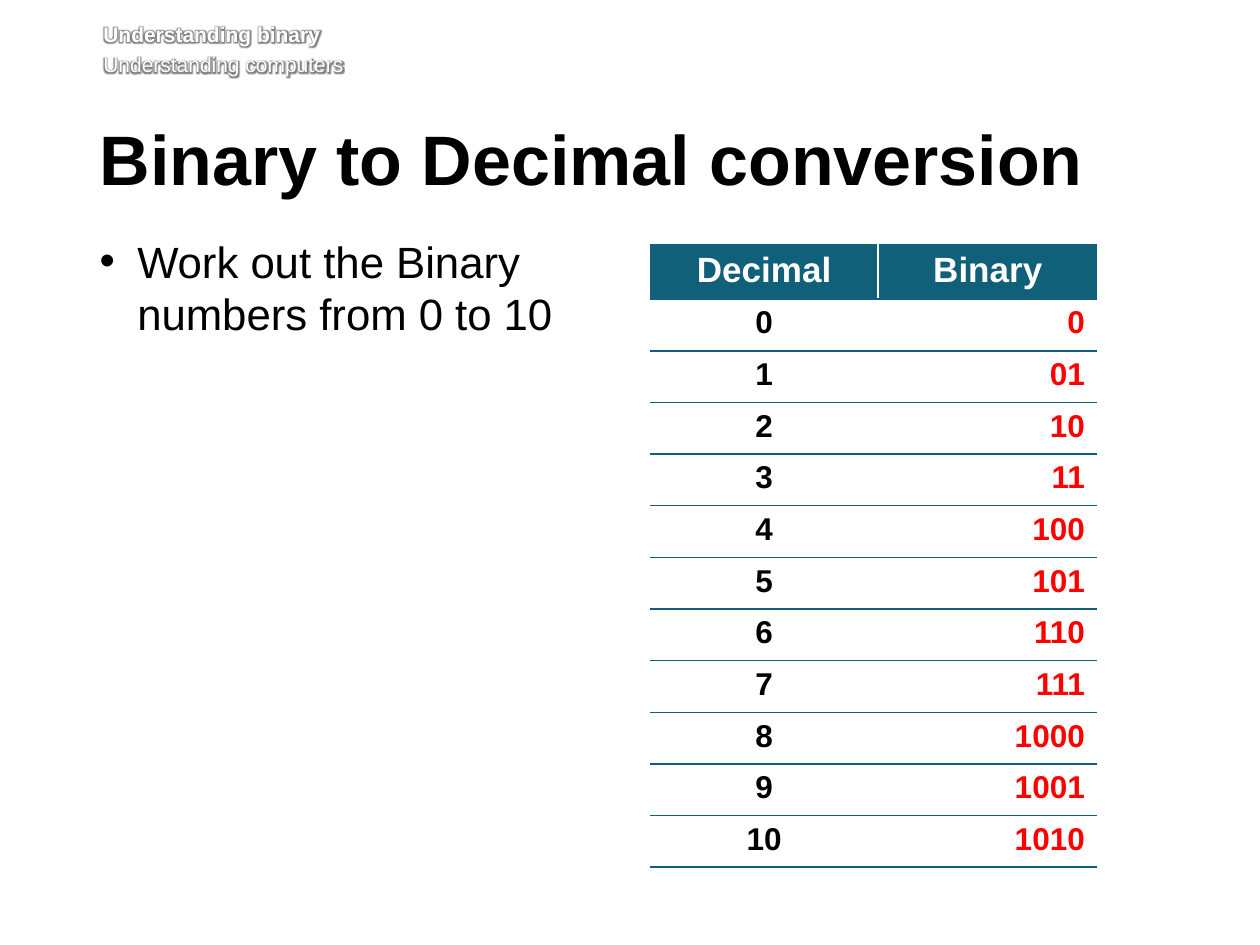
from lxml.etree import SubElement as Sub
from pptx import Presentation
from pptx.dml.color import RGBColor
from pptx.enum.text import PP_ALIGN as Align
from pptx.oxml.ns import qn
from pptx.util import Inches, Pt

FONT = "Arial"
WHITE = RGBColor(0xFF, 0xFF, 0xFF)
BLACK = RGBColor(0, 0, 0)
RED = RGBColor(0xFF, 0, 0)
TEAL = RGBColor(0x0F, 0x60, 0x78)

BINARY = ["0", "01", "10", "11", "100", "101", "110", "111",
          "1000", "1001", "1010"]
COLS = [1.81, 1.74]
ROW = 0.41


def write(par, text, size=18, color=BLACK, bold=False, align=None,
          before=None, after=None, line=None):
    """Put one formatted run in a paragraph and return the run."""
    run = par.add_run()
    run.text = text
    font = run.font
    font.name, font.size, font.bold = FONT, Pt(size), bold
    font.color.rgb = color
    par.alignment = align
    for name, value in (("space_before", before), ("space_after", after),
                        ("line_spacing", line)):
        if value is not None:
            setattr(par, name, Pt(value))
    return run


def add_box(slide, left, top, width, height, insets):
    box = slide.shapes.add_textbox(*map(Inches, (left, top, width, height)))
    frame = box.text_frame
    frame.word_wrap = True
    (frame.margin_left, frame.margin_top,
     frame.margin_right, frame.margin_bottom) = map(Inches, insets)
    return frame


def add_glow(run):
    """Set a soft grey halo behind the letters."""
    props = run.font._element
    effects = props.makeelement(qn("a:effectLst"), {})
    props.find(qn("a:solidFill")).addnext(effects)
    glow = Sub(effects, qn("a:glow"), rad=str(Pt(4)))
    color = Sub(glow, qn("a:srgbClr"), val=str(BLACK))
    Sub(color, qn("a:alpha"), val="50000")


def add_bullet(par, indent):
    props = par._p.get_or_add_pPr()
    props.set("marL", str(Inches(indent)))
    props.set("indent", str(-Inches(indent)))
    Sub(props, qn("a:buFont"), typeface=FONT)
    Sub(props, qn("a:buChar"), char="•")


def set_edges(cell, **edges):
    """Draw 1 pt lines on the named sides (L, R, T, B) and hide the others."""
    props = cell._tc.get_or_add_tcPr()
    for side in "LRTB":
        line = Sub(props, qn(f"a:ln{side}"), w=str(Pt(1)))
        if side in edges:
            fill = Sub(line, qn("a:solidFill"))
            Sub(fill, qn("a:srgbClr"), val=str(edges[side]))
        else:
            Sub(line, qn("a:noFill"))


def add_head(slide):
    frame = add_box(slide, 0.82, 0.17, 8.82, 0.49, (0, 0, 0, 0.05))
    add_glow(write(frame.paragraphs[0], "Understanding binary",
                   size=12, color=WHITE, bold=True))
    add_glow(write(frame.add_paragraph(), "Understanding computers",
                   size=12, color=WHITE, before=2.9))


def add_title(slide):
    frame = add_box(slide, 0.79, 0.99, 8.55, 0.73, (0, 0.05, 0.1, 0.05))
    write(frame.paragraphs[0], "Binary to Decimal conversion",
          size=40, bold=True, line=39, after=15)


def add_task(slide):
    frame = add_box(slide, 0.79, 1.86, 3.87, 3.78, (0, 0, 0.1, 0.05))
    par = frame.paragraphs[0]
    add_bullet(par, 0.3)
    write(par, "Work out the Binary numbers from 0 to 10", size=25, after=14)


def add_grid(slide):
    count = len(BINARY) + 1
    grid = slide.shapes.add_table(
        count, len(COLS), Inches(5.16), Inches(1.94),
        Inches(sum(COLS)), Inches(ROW * count)).table
    grid.horz_banding = False
    for col, width in zip(grid.columns, COLS):
        col.width = Inches(width)
    for row in grid.rows:
        row.height = Inches(ROW)

    for col, (name, side) in enumerate((("Decimal", "R"), ("Binary", "L"))):
        cell = grid.cell(0, col)
        set_edges(cell, T=TEAL, B=TEAL, **{side: WHITE})
        cell.fill.solid()
        cell.fill.fore_color.rgb = TEAL
        write(cell.text_frame.paragraphs[0], name, size=20, color=WHITE,
              bold=True, align=Align.CENTER)

    for num, code in enumerate(BINARY):
        looks = ((str(num), BLACK, Align.CENTER), (code, RED, Align.RIGHT))
        for col, (text, color, align) in enumerate(looks):
            cell = grid.cell(num + 1, col)
            set_edges(cell, T=TEAL, B=TEAL)
            cell.fill.background()
            write(cell.text_frame.paragraphs[0], text, color=color,
                  bold=True, align=align)


def main():
    deck = Presentation()
    deck.slide_width, deck.slide_height = Inches(10), Inches(7.5)
    slide = deck.slides.add_slide(deck.slide_layouts[6])
    add_head(slide)
    add_title(slide)
    add_task(slide)
    add_grid(slide)
    deck.save("out.pptx")


if __name__ == "__main__":
    main()
